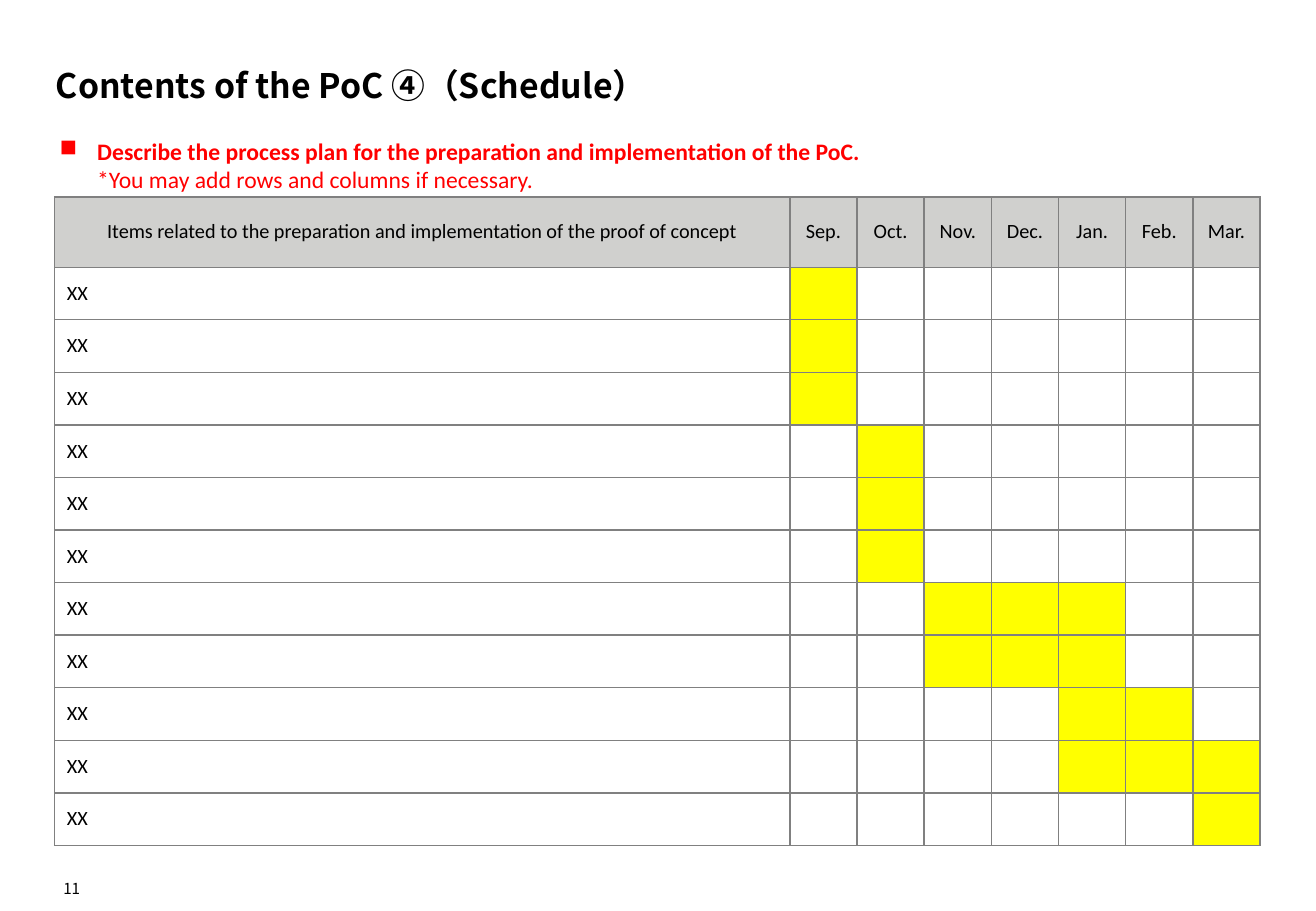
from typing import NamedTuple

from lxml.etree import SubElement
from pptx import Presentation
from pptx.dml.color import RGBColor
from pptx.enum.text import MSO_ANCHOR, PP_ALIGN
from pptx.oxml.ns import qn
from pptx.util import Inches, Pt

BLACK, RED, WHITE = "000000", "FF0000", "FFFFFF"
HEADER_GREY, BORDER_GREY, PLANNED_YELLOW = "D0D0CE", "808080", "FFFF00"
HEADING_FONT, BODY_FONT = "Noto Sans CJK JP", "Calibri"

TABLE_WIDTH, TABLE_HEIGHT = 9.92, 5.34
ITEM_WIDTH, HEADER_HEIGHT = 6.05, 0.58
MONTHS = ["Sep.", "Oct.", "Nov.", "Dec.", "Jan.", "Feb.", "Mar."]


class Task(NamedTuple):
    item: str
    start: str
    end: str


TASKS = [
    *[Task("XX", "Sep.", "Sep.")] * 3,
    *[Task("XX", "Oct.", "Oct.")] * 3,
    *[Task("XX", "Nov.", "Jan.")] * 2,
    Task("XX", "Jan.", "Feb."),
    Task("XX", "Jan.", "Mar."),
    Task("XX", "Mar.", "Mar."),
]


def rgb(color: str) -> RGBColor:
    return RGBColor.from_string(color)


def set_font(paragraph, name: str, size: float, color: str, bold: bool | None = None) -> None:
    font = paragraph.font
    font.name, font.size, font.bold = name, Pt(size), bold
    font.color.rgb = rgb(color)
    for run in paragraph.runs:
        SubElement(run.font._element, qn("a:ea"), typeface=name)


def add_text_area(slide, left: float, top: float, width: float, height: float,
                  anchor: MSO_ANCHOR, inset: float = 0, wrap: bool = True):
    """Add an empty text box and return its text frame."""
    frame = slide.shapes.add_textbox(
        Inches(left), Inches(top), Inches(width), Inches(height)).text_frame
    frame.word_wrap, frame.vertical_anchor = wrap, anchor
    frame.margin_left = frame.margin_right = Inches(inset)
    frame.margin_top = frame.margin_bottom = Inches(inset)
    return frame


def add_square_bullet(paragraph, indent: float) -> None:
    properties = paragraph._p.get_or_add_pPr()
    properties.set("marL", str(Inches(indent)))
    properties.set("indent", str(-Inches(indent)))
    SubElement(properties, qn("a:buChar"), char="■")


def add_instruction(slide) -> None:
    frame = add_text_area(slide, 0.45, 1.11, 9.92, 0.5, MSO_ANCHOR.MIDDLE, inset=0.04)
    instruction = frame.paragraphs[0]
    add_square_bullet(instruction, 0.31)
    request = instruction.add_run()
    request.text = "Describe the process plan for the preparation and implementation of the PoC."
    request.font.bold = True
    instruction.add_line_break()
    remark = instruction.add_run()
    remark.text = "*You may add rows and columns if necessary."
    remark.font.bold = False
    set_font(instruction, BODY_FONT, 14, RED)


def add_borders(cell) -> None:
    properties = cell._tc.get_or_add_tcPr()
    for position, side in enumerate(("a:lnL", "a:lnR", "a:lnT", "a:lnB")):
        line = SubElement(properties, qn(side), w=str(Pt(1)))
        fill = SubElement(line, qn("a:solidFill"))
        SubElement(fill, qn("a:srgbClr"), val=BORDER_GREY)
        properties.insert(position, line)


def fill_cell(cell, text: str, color: str, align: PP_ALIGN) -> None:
    cell.text = text
    cell.vertical_anchor = MSO_ANCHOR.MIDDLE
    cell.fill.solid()
    cell.fill.fore_color.rgb = rgb(color)
    paragraph = cell.text_frame.paragraphs[0]
    paragraph.alignment = align
    set_font(paragraph, BODY_FONT, 12, BLACK)
    add_borders(cell)


def add_schedule(slide) -> None:
    schedule = slide.shapes.add_table(
        len(TASKS) + 1, len(MONTHS) + 1, Inches(0.45), Inches(1.62),
        Inches(TABLE_WIDTH), Inches(TABLE_HEIGHT)).table
    schedule.first_row = schedule.horz_banding = False

    for column in schedule.columns:
        column.width = Inches((TABLE_WIDTH - ITEM_WIDTH) / len(MONTHS))
    schedule.columns[0].width = Inches(ITEM_WIDTH)
    for row in schedule.rows:
        row.height = Inches((TABLE_HEIGHT - HEADER_HEIGHT) / len(TASKS))
    schedule.rows[0].height = Inches(HEADER_HEIGHT)

    headings = ["Items related to the preparation and implementation of the proof of concept",
                *MONTHS]
    for column, heading in enumerate(headings):
        fill_cell(schedule.cell(0, column), heading, HEADER_GREY, PP_ALIGN.CENTER)

    for row, task in enumerate(TASKS, start=1):
        fill_cell(schedule.cell(row, 0), task.item, WHITE, PP_ALIGN.LEFT)
        first, last = MONTHS.index(task.start), MONTHS.index(task.end)
        for month in range(len(MONTHS)):
            color = PLANNED_YELLOW if first <= month <= last else WHITE
            fill_cell(schedule.cell(row, month + 1), "", color, PP_ALIGN.CENTER)


def main() -> None:
    presentation = Presentation()
    presentation.slide_width, presentation.slide_height = Inches(10.83), Inches(7.5)
    slide = presentation.slides.add_slide(presentation.slide_layouts[6])

    page_number = add_text_area(
        slide, 0.46, 7.2, 0.2, 0.19, MSO_ANCHOR.BOTTOM, wrap=False).paragraphs[0]
    page_number.text = "11"
    page_number.alignment = PP_ALIGN.RIGHT
    set_font(page_number, HEADING_FONT, 9, BLACK)

    title = add_text_area(slide, 0.46, 0.2, 9.92, 0.67, MSO_ANCHOR.BOTTOM).paragraphs[0]
    title.text = "Contents of the PoC ④（Schedule）"
    set_font(title, HEADING_FONT, 20, BLACK, bold=True)

    add_instruction(slide)
    add_schedule(slide)
    presentation.save("out.pptx")


if __name__ == "__main__":
    main()
